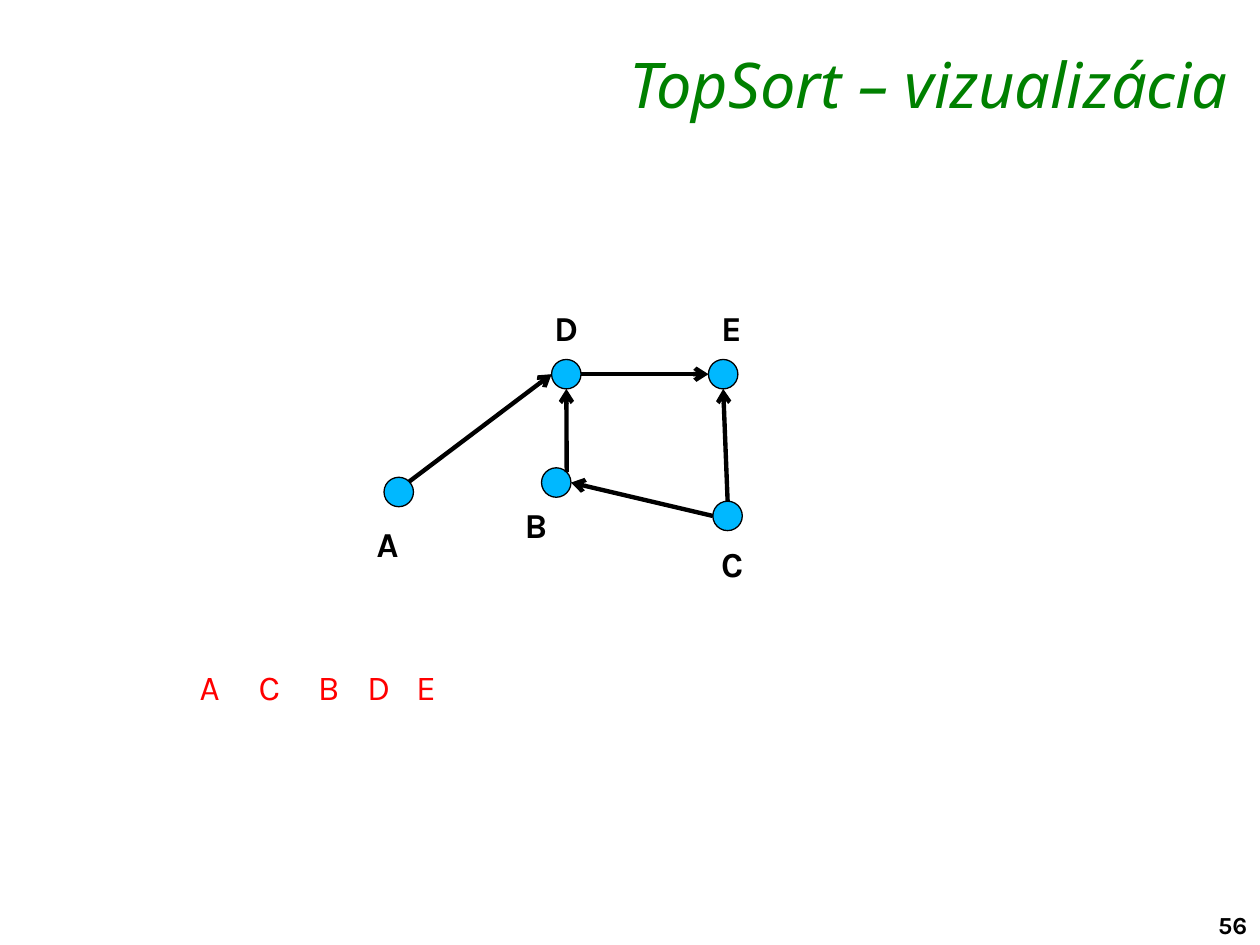
from itertools import accumulate
from math import sqrt

from lxml.etree import SubElement
from pptx import Presentation
from pptx.dml.color import RGBColor
from pptx.enum.shapes import MSO_CONNECTOR as Connector, MSO_SHAPE as Shape
from pptx.enum.text import PP_ALIGN as Align
from pptx.oxml.ns import qn
from pptx.util import Inches, Pt

BLACK = RGBColor(0x00, 0x00, 0x00)
GREEN = RGBColor(0x00, 0x80, 0x00)
RED = RGBColor(0xFF, 0x00, 0x00)
BLUE = RGBColor(0x00, 0xB8, 0xFF)

COLUMNS, ROWS = 100, 75
CELL = Inches(10) // COLUMNS
RADIUS = 1.17
DIAGONAL = sqrt(0.5)

NODES = {
    "A": ((3.65, 16.05), (0.9, 18)),
    "B": ((16.15, 15.3), (12.65, 16.5)),
    "C": ((29.75, 17.95), (28.25, 19.6)),
    "D": ((16.95, 6.7), (15, 0.8)),
    "E": ((29.4, 6.7), (28.25, 0.8)),
}
PORTS = {
    "top": (0, -1),
    "bottom": (0, 1),
    "left": (-1, 0),
    "right": (1, 0),
    "top right": (DIAGONAL, -DIAGONAL),
}
EDGES = [
    ("A", "top right", "D", "left"),
    ("D", "right", "E", "left"),
    ("B", "top right", "D", "bottom"),
    ("C", "left", "B", "right"),
    ("C", "top", "E", "bottom"),
]
SORTED_NODES = "ACBDE"
SORTED_STEPS = [4.7, 4.7, 3.9, 3.9]


def cells(*counts):
    return [round(count * CELL) for count in counts]


def add_text(slide, box, text, size, color, font="Karla",
             bold=False, italic=False, align=Align.LEFT, wrap=False):
    frame = slide.shapes.add_textbox(*cells(*box)).text_frame
    frame.word_wrap = wrap
    paragraph = frame.paragraphs[0]
    paragraph.text = text
    paragraph.alignment = align
    style = paragraph.font
    style.name, style.size = font, Pt(size)
    style.bold, style.italic = bold, italic
    style.color.rgb = color


def add_title(slide, box):
    add_text(slide, box, "TopSort – vizualizácia", 36, GREEN, "Noto Sans",
             italic=True, align=Align.RIGHT, wrap=True)


def add_node(slide, x, y):
    node = slide.shapes.add_shape(
        Shape.OVAL, *cells(x - RADIUS, y - RADIUS, 2 * RADIUS, 2 * RADIUS))
    node.shadow.inherit = False
    node.fill.solid()
    node.fill.fore_color.rgb = BLUE
    node.line.color.rgb = BLACK
    node.line.width = Pt(0.75)


def add_edge(slide, start, end):
    edge = slide.shapes.add_connector(
        Connector.STRAIGHT, *cells(*start, *end))
    edge.line.color.rgb = BLACK
    edge.line.width = Pt(2.5)
    outline = edge._element.spPr.find(qn("a:ln"))
    SubElement(outline, qn("a:tailEnd"), type="arrow")
    SubElement(edge._element.spPr, qn("a:effectLst"))


def add_graph(slide, left, top):
    centers = {name: (left + x, top + y)
               for name, ((x, y), _) in NODES.items()}

    def port(name, side):
        return [center + RADIUS * direction
                for center, direction in zip(centers[name], PORTS[side])]

    for center in centers.values():
        add_node(slide, *center)
    for source, exit_side, target, entry_side in EDGES:
        add_edge(slide, port(source, exit_side), port(target, entry_side))
    for name, (_, (x, y)) in NODES.items():
        add_text(slide, (left + x, top + y, 3.7, 4.4), name, 20, BLACK,
                 bold=True)


def add_sorted_order(slide, left, top):
    for name, x in zip(SORTED_NODES, accumulate(SORTED_STEPS, initial=left)):
        add_text(slide, (x, top, 3.9, 5.1), name, 20, RED, wrap=True)


def add_page_number(slide, box):
    add_text(slide, box, "56", 14, BLACK, bold=True, wrap=True)


def main():
    deck = Presentation()
    deck.slide_width, deck.slide_height = cells(COLUMNS, ROWS)
    slide = deck.slides.add_slide(deck.slide_layouts[6])
    add_page_number(slide, (95.7, 71.75, 5.1, 3.3))
    add_title(slide, (22.9, 3.1, 75.5, 5.8))
    add_graph(slide, 28, 23)
    add_sorted_order(slide, 14.85, 52.3)
    deck.save("out.pptx")


if __name__ == "__main__":
    main()
